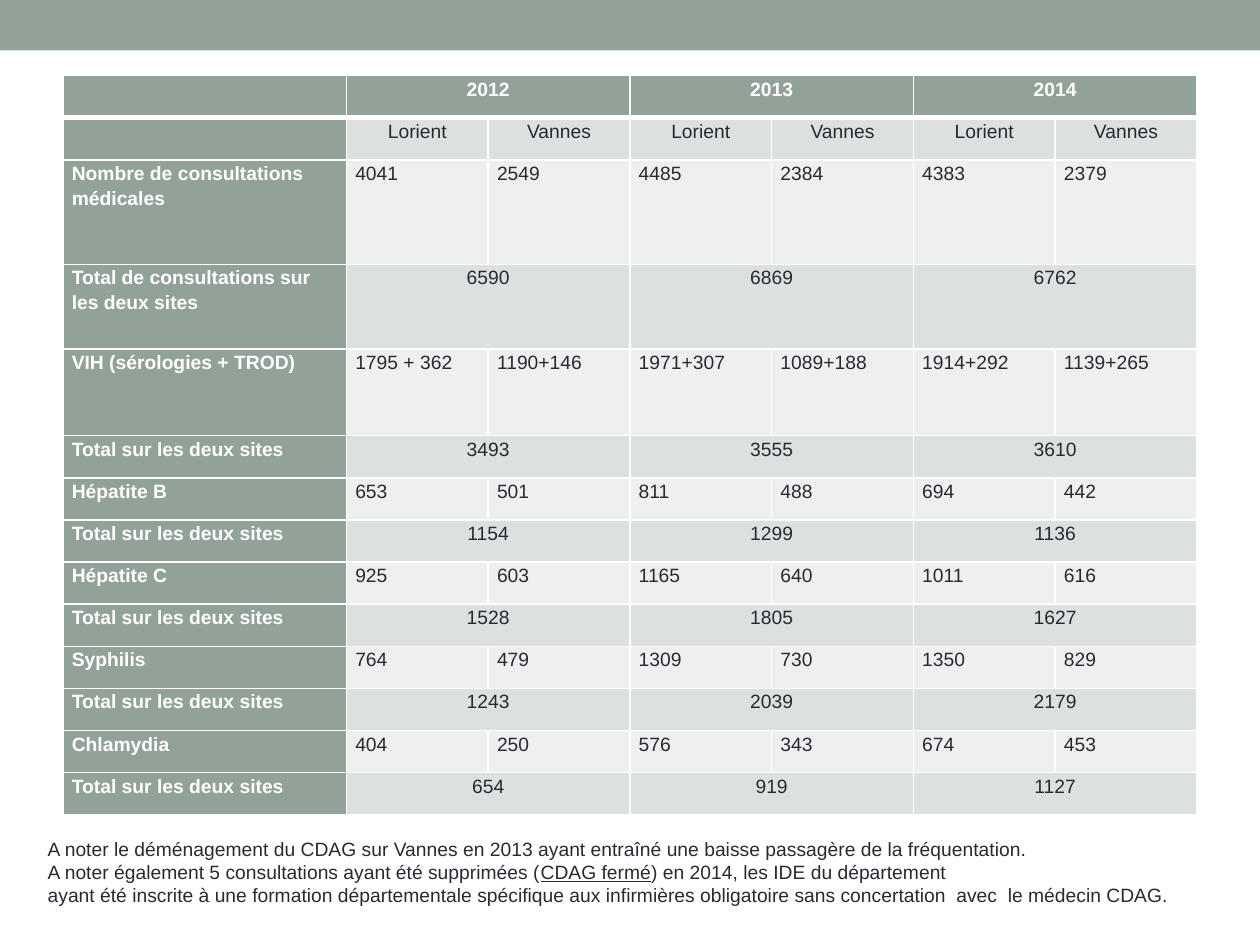
from lxml.etree import SubElement
from pptx import Presentation
from pptx.dml.color import RGBColor
from pptx.enum.shapes import MSO_SHAPE
from pptx.enum.text import MSO_ANCHOR, MSO_AUTO_SIZE, PP_ALIGN
from pptx.oxml.ns import qn
from pptx.util import Inches, Pt

SAGE, DARK, WHITE = "93A299", "292934", "FFFFFF"
TOTAL_FILL, SITE_FILL = "DCE0DE", "EEF0EF"
SITES_TOTAL = "Total sur les deux sites"

# Three values: one per year, over both sites. Six values: one per site.
ROWS = [
    ("", ["2012", "2013", "2014"]),
    ("", ["Lorient", "Vannes"] * 3),
    ("Nombre de consultations médicales", ["4041", "2549", "4485", "2384", "4383", "2379"]),
    ("Total de consultations sur les deux sites", ["6590", "6869", "6762"]),
    ("VIH (sérologies + TROD)",
     ["1795 + 362", "1190+146", "1971+307", "1089+188", "1914+292", "1139+265"]),
    (SITES_TOTAL, ["3493", "3555", "3610"]),
    ("Hépatite B", ["653", "501", "811", "488", "694", "442"]),
    (SITES_TOTAL, ["1154", "1299", "1136"]),
    ("Hépatite C", ["925", "603", "1165", "640", "1011", "616"]),
    (SITES_TOTAL, ["1528", "1805", "1627"]),
    ("Syphilis", ["764", "479", "1309", "730", "1350", "829"]),
    (SITES_TOTAL, ["1243", "2039", "2179"]),
    ("Chlamydia", ["404", "250", "576", "343", "674", "453"]),
    (SITES_TOTAL, ["654", "919", "1127"]),
]
# Each note is a list of (text, underlined) parts.
NOTES = [
    [("A noter le déménagement du CDAG sur Vannes en 2013 ayant entraîné une baisse "
      "passagère de la fréquentation.", False)],
    [("A noter également 5 consultations ayant été supprimées (", False),
     ("CDAG fermé", True),
     (") en 2014, les IDE du département", False)],
    [("ayant été inscrite à une formation départementale spécifique aux infirmières "
      "obligatoire sans concertation  avec  le médecin CDAG.", False)],
]

TABLE_WIDTH, TABLE_HEIGHT = 9, 5.87
LABEL_WIDTH, SITE_COUNT = 2.25, 6
TALL_ROWS = {2: 0.83, 3: 0.67, 4: 0.69}
SITE_WIDTH = (TABLE_WIDTH - LABEL_WIDTH) / SITE_COUNT
ROW_HEIGHT = (TABLE_HEIGHT - sum(TALL_ROWS.values())) / (len(ROWS) - len(TALL_ROWS))
CELL_FORMAT = {
    "margin_left": Inches(0.07), "margin_right": Inches(0.07),
    "margin_top": 0, "margin_bottom": 0,
}


def rgb(color):
    return RGBColor.from_string(color)


def add_run(paragraph, text, color, **extra):
    run = paragraph.add_run()
    run.text = text
    run.font.color.rgb = rgb(color)
    for name, value in {"name": "Arial", "size": Pt(11), **extra}.items():
        setattr(run.font, name, value)


def set_borders(cell, top, bottom):
    """White lines round a cell, 1 pt at the sides."""
    properties = cell._tc.get_or_add_tcPr()
    for side, width in {"L": 1, "R": 1, "T": top, "B": bottom}.items():
        line = SubElement(properties, qn(f"a:ln{side}"), w=str(Pt(width)))
        SubElement(SubElement(line, qn("a:solidFill")), qn("a:srgbClr"), val=WHITE)


def style_cell(cell, row, fill):
    set_borders(cell, top=3 if row == 1 else 1, bottom=3 if row == 0 else 1)
    cell.fill.solid()
    cell.fill.fore_color.rgb = rgb(fill)
    for name, value in CELL_FORMAT.items():
        setattr(cell, name, value)


def write_cell(cell, text, color, bold, align):
    paragraph = cell.text_frame.paragraphs[0]
    for name, value in {"alignment": align, "line_spacing": 1.15,
                        "space_after": Pt(10)}.items():
        setattr(paragraph, name, value)
    add_run(paragraph, text, color, bold=bold)


def add_figures(slide):
    table = slide.shapes.add_table(
        len(ROWS), SITE_COUNT + 1, Inches(0.5), Inches(0.6),
        Inches(TABLE_WIDTH), Inches(TABLE_HEIGHT)).table
    for column, grid_column in enumerate(table.columns):
        grid_column.width = Inches(SITE_WIDTH if column else LABEL_WIDTH)
    for row, (label, values) in enumerate(ROWS):
        table.rows[row].height = Inches(TALL_ROWS.get(row, ROW_HEIGHT))
        header = row == 0
        value_fill = SAGE if header else TOTAL_FILL if row % 2 else SITE_FILL
        for column in range(SITE_COUNT + 1):
            style_cell(table.cell(row, column), row, value_fill if column else SAGE)
        write_cell(table.cell(row, 0), label, WHITE, True, PP_ALIGN.LEFT)

        span = SITE_COUNT // len(values)
        centred = span > 1 or row == 1
        for index, value in enumerate(values):
            column = 1 + index * span
            cell = table.cell(row, column)
            if span > 1:
                cell.merge(table.cell(row, column + span - 1))
            write_cell(cell, value, WHITE if header else DARK, header,
                       PP_ALIGN.CENTER if centred else PP_ALIGN.LEFT)


def add_notes(slide):
    frame = slide.shapes.add_textbox(
        Inches(0.28), Inches(6.59), Inches(9.19), Inches(0.66)).text_frame
    for name, value in {"word_wrap": False, "vertical_anchor": MSO_ANCHOR.MIDDLE,
                        "auto_size": MSO_AUTO_SIZE.SHAPE_TO_FIT_TEXT}.items():
        setattr(frame, name, value)
    for index, note in enumerate(NOTES):
        paragraph = frame.add_paragraph() if index else frame.paragraphs[0]
        for text, underlined in note:
            add_run(paragraph, text, DARK, underline=underlined)


def main():
    deck = Presentation()
    deck.slide_width, deck.slide_height = Inches(10), Inches(7.5)
    slide = deck.slides.add_slide(deck.slide_layouts[6])
    band = slide.shapes.add_shape(MSO_SHAPE.RECTANGLE, 0, 0, deck.slide_width, Inches(0.4))
    band.shadow.inherit = False
    band.fill.solid()
    band.fill.fore_color.rgb = rgb(SAGE)
    band.line.fill.background()
    add_figures(slide)
    add_notes(slide)
    deck.save("out.pptx")


if __name__ == "__main__":
    main()
